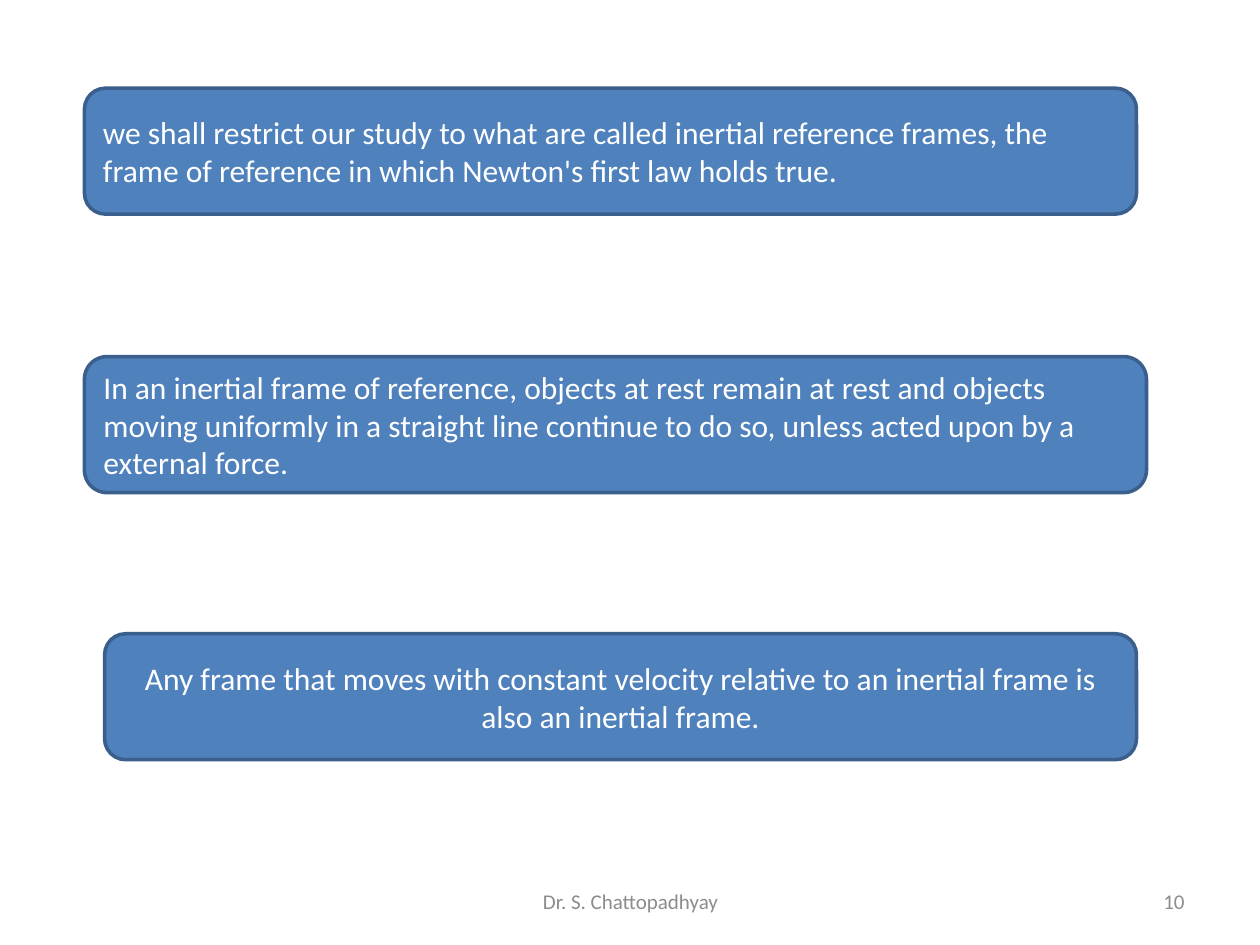
from pptx import Presentation
from pptx.dml.color import RGBColor
from pptx.enum.shapes import MSO_SHAPE
from pptx.enum.text import MSO_ANCHOR, PP_ALIGN
from pptx.util import Inches, Pt

BLUE = RGBColor(0x4F, 0x81, 0xBD)
DARK_BLUE = RGBColor(0x3A, 0x5F, 0x8C)
WHITE = RGBColor(0xFF, 0xFF, 0xFF)
GRAY = RGBColor(0x8C, 0x8C, 0x8C)

# Content: text, alignment, (left, top, width, height) in inches
STATEMENTS = [
    ("we shall restrict our study to what are called inertial reference frames, the "
     "frame of reference in which Newton's first law holds true.",
     PP_ALIGN.LEFT, (0.67, 0.7, 8.35, 1)),
    ("In an inertial frame of reference, objects at rest remain at rest and objects "
     "moving uniformly in a straight line continue to do so, unless acted upon by a "
     "external force.",
     PP_ALIGN.LEFT, (0.67, 2.83, 8.43, 1.08)),
    ("Any frame that moves with constant velocity relative to an inertial frame is "
     "also an inertial frame.",
     PP_ALIGN.CENTER, (0.83, 5.03, 8.19, 1)),
]
FOOTERS = [
    ("Dr. S. Chattopadhyay", PP_ALIGN.CENTER, (3.42, 6.95, 3.17, 0.4)),
    ("10", PP_ALIGN.RIGHT, (7.17, 6.95, 2.33, 0.4)),
]


def write(sp, text, align, size, color):
    tf = sp.text_frame
    tf.word_wrap = True
    tf.vertical_anchor = MSO_ANCHOR.MIDDLE
    p = tf.paragraphs[0]
    p.text = text
    p.alignment = align
    p.font.name = "Calibri"
    p.font.size = Pt(size)
    p.font.color.rgb = color


prs = Presentation()
prs.slide_width, prs.slide_height = Inches(10), Inches(7.5)
s = prs.slides.add_slide(prs.slide_layouts[6])

# Statement boxes
for text, align, box in STATEMENTS:
    sp = s.shapes.add_shape(MSO_SHAPE.ROUNDED_RECTANGLE, *map(Inches, box))
    sp.shadow.inherit = False
    sp.fill.solid()
    sp.fill.fore_color.rgb = BLUE
    sp.line.color.rgb = DARK_BLUE
    sp.line.width = Pt(2)
    write(sp, text, align, 18, WHITE)

# Footer: author and page number
for text, align, box in FOOTERS:
    write(s.shapes.add_textbox(*map(Inches, box)), text, align, 12, GRAY)

prs.save("out.pptx")
